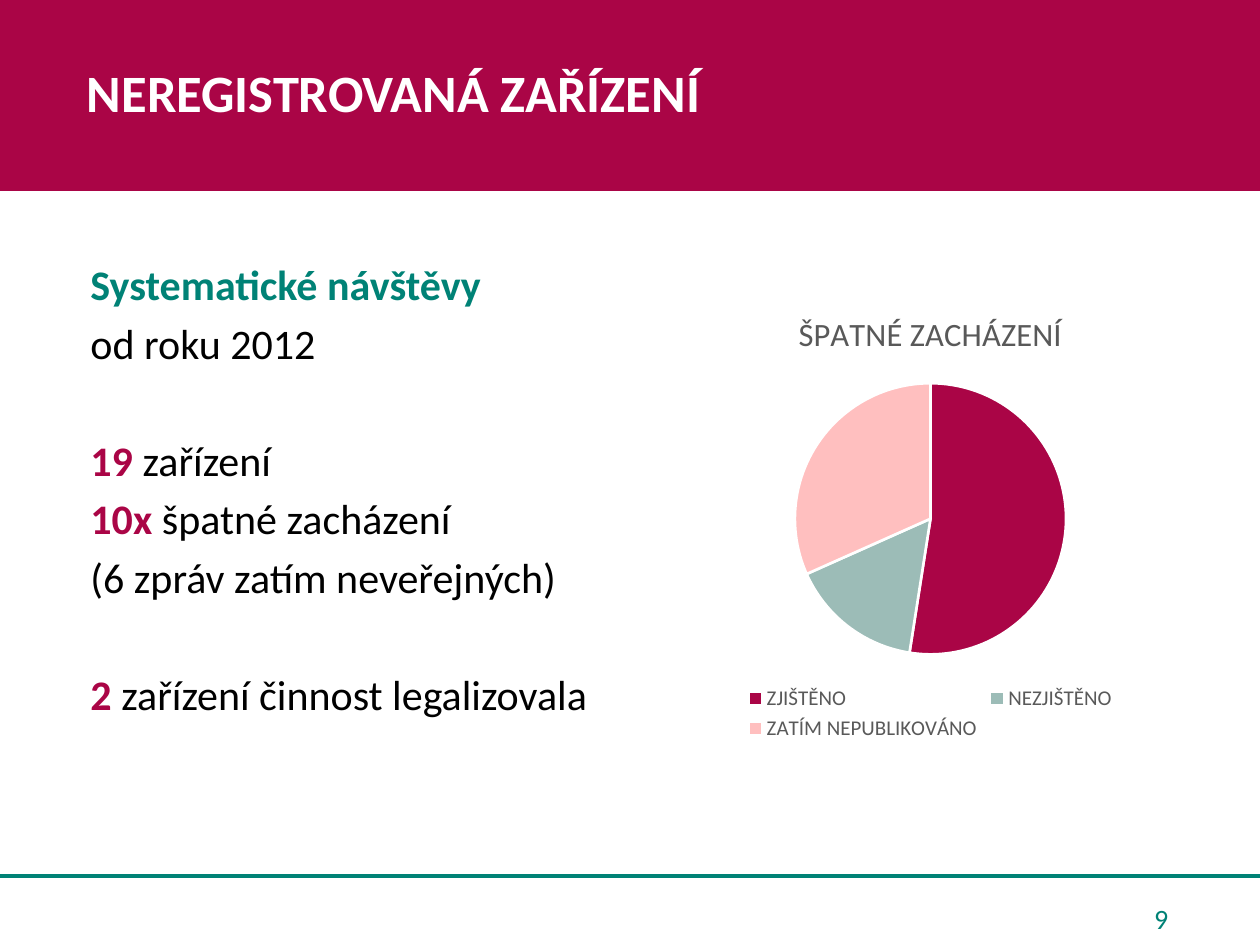
from dataclasses import dataclass

from lxml import etree
from pptx import Presentation
from pptx.chart.data import CategoryChartData
from pptx.dml.color import RGBColor
from pptx.enum.chart import XL_CHART_TYPE, XL_LEGEND_POSITION
from pptx.enum.shapes import MSO_CONNECTOR, MSO_SHAPE
from pptx.enum.text import MSO_ANCHOR, PP_ALIGN
from pptx.oxml.ns import qn
from pptx.util import Inches, Pt

PIE = XL_CHART_TYPE.PIE
BOTTOM = XL_LEGEND_POSITION.BOTTOM
STRAIGHT = MSO_CONNECTOR.STRAIGHT
RECT = MSO_SHAPE.RECTANGLE
MIDDLE = MSO_ANCHOR.MIDDLE
RIGHT = PP_ALIGN.RIGHT


@dataclass(frozen=True)
class Theme:
    font: str = "Calibri"
    crimson: str = "AA0546"
    teal: str = "008276"
    sage: str = "9CBCB7"
    pink: str = "FFBFBF"
    grey: str = "595959"
    black: str = "000000"
    white: str = "FFFFFF"
    title: float = 30
    body: float = 24
    number: float = 16
    chart_title: float = 18.6
    legend: float = 12
    line_spacing: float = 0.9
    gap: float = 7.5        # space between lines
    group_gap: float = 41   # space between groups of lines


@dataclass(frozen=True)
class Line:
    """A body line: a bold coloured lead followed by plain text."""
    lead: str
    rest: str
    color: str
    new_group: bool = False


@dataclass(frozen=True)
class Slice:
    label: str
    value: int
    color: str


T = Theme()

LINES = [
    Line("Systematické návštěvy", "", T.teal),
    Line("", "od roku 2012", T.teal),
    Line("19", " zařízení", T.crimson, new_group=True),
    Line("10x", " špatné zacházení", T.crimson),
    Line("", "(6 zpráv zatím neveřejných)", T.crimson),
    Line("2 ", "zařízení činnost legalizovala", T.crimson, new_group=True),
]

CHART_TITLE = "ŠPATNÉ ZACHÁZENÍ"
SLICES = [
    Slice("ZJIŠTĚNO", 53, T.crimson),
    Slice("NEZJIŠTĚNO", 16, T.sage),
    Slice("ZATÍM NEPUBLIKOVÁNO", 32, T.pink),
]


def rgb(color: str) -> RGBColor:
    return RGBColor.from_string(color)


def place(s, left: float, top: float, width: float, height: float) -> None:
    box = {"left": left, "top": top, "width": width, "height": height}
    for name, value in box.items():
        setattr(s, name, Inches(value))


def set_font(font, size: float, color: str, bold: bool = False) -> None:
    values = {"name": T.font, "size": Pt(size), "bold": bold}
    for name, value in values.items():
        setattr(font, name, value)
    font.color.rgb = rgb(color)


def add_run(p, text: str, size: float, color: str, bold: bool = False) -> None:
    r = p.add_run()
    r.text = text
    set_font(r.font, size, color, bold)


def add_text_box(slide, left: float, top: float, width: float, height: float):
    s = slide.shapes.add_textbox(0, 0, 0, 0)
    place(s, left, top, width, height)
    s.text_frame.word_wrap = True
    return s.text_frame


def add_frame(slide) -> None:
    """Footer rule and header band."""
    rule = slide.shapes.add_connector(
        STRAIGHT, Inches(-0.03), Inches(6.95), Inches(10.04), Inches(6.95))
    rule.line.color.rgb = rgb(T.teal)
    rule.line.width = Pt(2.25)
    etree.SubElement(rule._element.spPr, qn("a:effectLst"))

    band = slide.shapes.add_shape(RECT, 0, 0, Inches(10.04), Inches(1.51))
    band.shadow.inherit = False
    band.fill.solid()
    band.fill.fore_color.rgb = rgb(T.crimson)
    band.line.color.rgb = rgb(T.crimson)
    band.line.width = Pt(1)


def add_title(slide, text: str) -> None:
    s = slide.shapes.title
    slide.shapes._spTree.append(s._element)  # bring in front of the band
    place(s, 0, 0, 10, 1.51)
    tf = s.text_frame
    tf.vertical_anchor = MIDDLE
    p = tf.paragraphs[0]
    p.alignment = PP_ALIGN.LEFT
    p.line_spacing = T.line_spacing
    p._p.get_or_add_pPr().set("marL", str(Inches(0.59)))
    add_run(p, text, T.title, T.white, bold=True)


def add_page_number(slide, text: str) -> None:
    tf = add_text_box(slide, 7.08, 7.09, 2.29, 0.4)
    tf.vertical_anchor = MIDDLE
    p = tf.paragraphs[0]
    p.alignment = RIGHT
    add_run(p, text, T.number, T.teal)


def add_body(slide, lines: list[Line]) -> None:
    tf = add_text_box(slide, 0.62, 2.05, 9.1, 4.92)
    for i, line in enumerate(lines):
        p = tf.add_paragraph() if i else tf.paragraphs[0]
        p.line_spacing = T.line_spacing
        if i:
            p.space_before = Pt(T.group_gap if line.new_group else T.gap)
        if line.lead:
            add_run(p, line.lead, T.body, line.color, bold=True)
        if line.rest:
            add_run(p, line.rest, T.body, T.black)


def add_pie(slide, title: str, slices: list[Slice]) -> None:
    data = CategoryChartData()
    data.categories = [s.label for s in slices]
    data.add_series(title, [s.value for s in slices])
    chart = slide.shapes.add_chart(
        PIE, Inches(4.91), Inches(2.3), Inches(4.95), Inches(3.62), data).chart
    set_font(chart.font, 10, T.black)

    chart.has_title = True
    p = chart.chart_title.text_frame.paragraphs[0]
    add_run(p, title, T.chart_title, T.grey)

    chart.has_legend = True
    chart.legend.position = BOTTOM
    chart.legend.include_in_layout = False
    set_font(chart.legend.font, T.legend, T.grey)

    plot = chart.plots[0]
    plot.vary_by_categories = True
    for i, s in enumerate(slices):
        fmt = plot.series[0].points[i].format
        fmt.fill.solid()
        fmt.fill.fore_color.rgb = rgb(s.color)
        fmt.line.color.rgb = rgb(T.white)
        fmt.line.width = Pt(1.5)


def main() -> None:
    prs = Presentation()
    prs.slide_width, prs.slide_height = Inches(10), Inches(7.5)
    slide = prs.slides.add_slide(prs.slide_layouts[5])
    add_frame(slide)
    add_title(slide, "NEREGISTROVANÁ ZAŘÍZENÍ")
    add_page_number(slide, "9")
    add_body(slide, LINES)
    add_pie(slide, CHART_TITLE, SLICES)
    prs.save("out.pptx")


if __name__ == "__main__":
    main()
